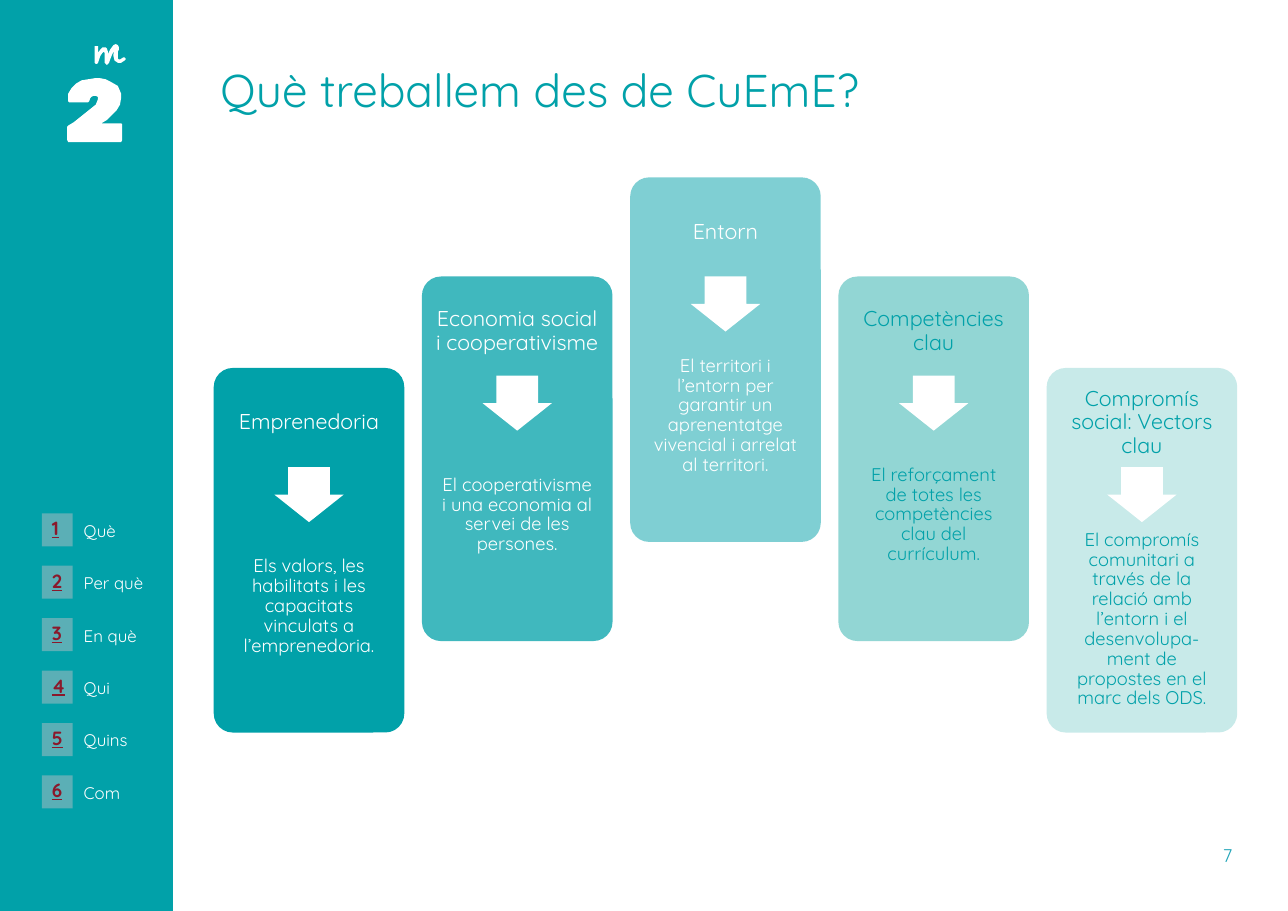
from lxml import etree
from pptx import Presentation
from pptx import util as u
from pptx.dml.color import RGBColor
from pptx.enum import shapes, text
from pptx.oxml.ns import qn


class Theme:
    font = "Quicksand"
    teal, mint, white = "01A1A9", "92D6D4", "FFFFFF"
    badge, number, page = "5BAFB6", "8A192B", "1FA4B8"
    title_size, card_size, body_size = 30, 14, 12
    badge_size, nav_size = 12.5, 11


class SlideBuilder:
    def __init__(self, slide, theme):
        self.s, self.theme = slide, theme

    def paint(self, sp, color, alpha=100):
        sp.shadow.inherit = False
        sp.fill.solid()
        sp.fill.fore_color.rgb = RGBColor.from_string(color)
        sp.line.fill.background()
        if alpha < 100:
            clr = sp.element.spPr.find(qn("a:solidFill"))[0]
            etree.SubElement(clr, qn("a:alpha"), val=str(alpha * 1000))

    def set_text(self, sp, words, size, color, insets=(0, 0, 0, 0), align=text.PP_ALIGN.LEFT,
                 anchor=text.MSO_ANCHOR.TOP, spacing=None):
        tf = sp.text_frame
        tf.word_wrap = True
        tf.auto_size = text.MSO_AUTO_SIZE.NONE
        tf.vertical_anchor = anchor
        tf.margin_left, tf.margin_top, tf.margin_right, tf.margin_bottom = map(u.Inches, insets)
        p = tf.paragraphs[0]
        p.text = words
        p.alignment = align
        if spacing:
            p.line_spacing = spacing
        p.font.name, p.font.size = self.theme.font, u.Pt(size)
        p.font.color.rgb = RGBColor.from_string(color)
        return p

    def title(self, words, *box):
        sp = self.s.shapes.title
        sp.left, sp.top, sp.width, sp.height = map(u.Inches, box)
        self.set_text(sp, words, self.theme.title_size, self.theme.teal, (0.01, 0.01, 0, 0))

    def shape(self, kind, box, color, alpha=100, adjustments=()):
        sp = self.s.shapes.add_shape(kind, *map(u.Inches, box))
        self.paint(sp, color, alpha)
        for i, value in enumerate(adjustments):
            sp.adjustments[i] = value
        return sp

    def text_box(self, words, box, size, color, **style):
        sp = self.s.shapes.add_textbox(*map(u.Inches, box))
        return self.set_text(sp, words, size, color, **style)

    def outline(self, points, color):
        builder = self.s.shapes.build_freeform(*points[0], scale=u.Inches(0.01))
        builder.add_line_segments(points[1:], close=True)
        self.paint(builder.convert_to_shape(), color)

    def card(self, left, top, heading, body, fill, alpha, color, pad, drop):
        t = self.theme
        centred = dict(align=text.PP_ALIGN.CENTER, anchor=text.MSO_ANCHOR.MIDDLE, spacing=0.9)
        sp = self.shape(SHAPE.ROUNDED_RECTANGLE, (left, top, CARD_W, CARD_H), fill, alpha, [0.1])
        edge = 0.06 if pad < 0.1 else 0.1
        self.set_text(sp, heading, t.card_size, color,
                      insets=(edge, edge, edge, edge + 2.31), **centred)
        self.text_box(body, (left + 0.08, top + 1.09 + drop, CARD_W - 0.16, 2.15),
                      t.body_size, color, insets=(pad,) * 4, **centred)
        self.shape(SHAPE.DOWN_ARROW, (left + (CARD_W - ARROW_W) / 2, top + 0.9, ARROW_W, 0.5),
                   t.white, adjustments=(0.6, 0.5))

    def nav_item(self, number, label, top):
        t = self.theme
        sp = self.shape(SHAPE.RECTANGLE, (0.38, top, 0.28, 0.3), t.badge)
        p = self.set_text(sp, str(number), t.badge_size, t.number, (0.09, 0.03, 0, 0.06))
        p.font.bold = p.font.underline = True
        self.text_box(label, (0.76, top + 0.01, 0.75, 0.29), t.nav_size, t.white,
                      insets=(0, 0.05, 0.1, 0.05), anchor=text.MSO_ANCHOR.MIDDLE)


SHAPE = shapes.MSO_SHAPE
CARD_W, CARD_H, CARD_PITCH = 1.73, 3.31, 1.89
ARROW_W = 0.63

# Outlines of the module mark, in hundredths of an inch
LETTER_M = [
    (105, 40), (103, 41), (100, 45), (98, 49), (98, 47), (97, 44), (96, 43), (93, 43),
    (91, 45), (89, 48), (89, 42), (88, 42), (86, 42), (86, 57), (87, 58), (88, 58),
    (89, 57), (91, 51), (93, 48), (94, 47), (95, 48), (95, 57), (96, 58), (97, 59),
    (98, 58), (99, 57), (100, 54), (102, 49), (104, 46), (103, 49), (103, 51), (104, 55),
    (107, 57), (110, 57), (113, 55), (114, 54), (114, 53), (113, 52), (112, 52), (109, 54),
    (108, 54), (107, 53), (107, 47), (108, 45), (108, 43), (107, 41)]
DIGIT_2 = [
    (86, 71), (80, 72), (74, 73), (69, 76), (65, 80), (62, 85), (62, 92), (63, 93),
    (80, 93), (81, 92), (82, 89), (83, 88), (85, 87), (87, 87), (89, 88), (89, 90),
    (87, 95), (82, 99), (77, 103), (67, 111), (62, 114), (61, 115), (61, 127), (62, 129),
    (110, 129), (111, 127), (111, 113), (110, 112), (92, 112), (97, 109), (100, 106),
    (106, 100), (109, 95), (110, 89), (110, 85), (107, 78), (100, 74), (96, 72), (91, 71)]

# Top, heading, body, fill, opacity, text colour, body inset, body shift
CARDS = [
    (3.34, "Emprenedoria",
     "Els valors, les habilitats i les capacitats vinculats a l’emprenedoria.",
     Theme.teal, 100, Theme.white, 0.08, 0),
    (2.51, "Economia social i cooperativisme",
     "El cooperativisme i una economia al servei de les persones.",
     Theme.teal, 75, Theme.white, 0.08, 0),
    (1.61, "Entorn",
     "El territori i l’entorn per garantir un aprenentatge vivencial i arrelat al territori.",
     Theme.teal, 50, Theme.white, 0.08, 0),
    (2.51, "Competències clau",
     "El reforçament de totes les competències clau del currículum.",
     Theme.mint, 100, Theme.teal, 0.15, 0),
    (3.34, "Compromís social: Vectors clau",
     "El compromís comunitari a través de la relació amb l’entorn i el "
     "desenvolupa-ment de propostes en el marc dels ODS.",
     Theme.mint, 50, Theme.teal, 0.15, 0.12),
]
NAV = ["Què", "Per què", "En què", "Qui", "Quins", "Com"]


def main():
    prs = Presentation()
    prs.slide_width, prs.slide_height = u.Inches(11.69), u.Inches(8.27)
    page = SlideBuilder(prs.slides.add_slide(prs.slide_layouts[5]), Theme)

    # Sidebar with module mark
    page.shape(SHAPE.RECTANGLE, (0, 0, 1.57, 8.27), Theme.teal)
    for points in (LETTER_M, DIGIT_2):
        page.outline(points, Theme.white)

    # Title
    page.title("Què treballem des de CuEmE?", 1.99, 0.55, 8.02, 0.52)

    # Cards
    for i, (top, *content) in enumerate(CARDS):
        page.card(1.94 + i * CARD_PITCH, top, *content)

    # Navigation
    for i, label in enumerate(NAV):
        page.nav_item(i + 1, label, 4.66 + i * 2.38 / 5)

    # Page number
    page.text_box("7", (11.06, 7.67, 0.18, 0.2), Theme.body_size, Theme.page,
                  insets=(0.04, 0, 0, 0), spacing=u.Pt(14.2))

    prs.save("out.pptx")


if __name__ == "__main__":
    main()
